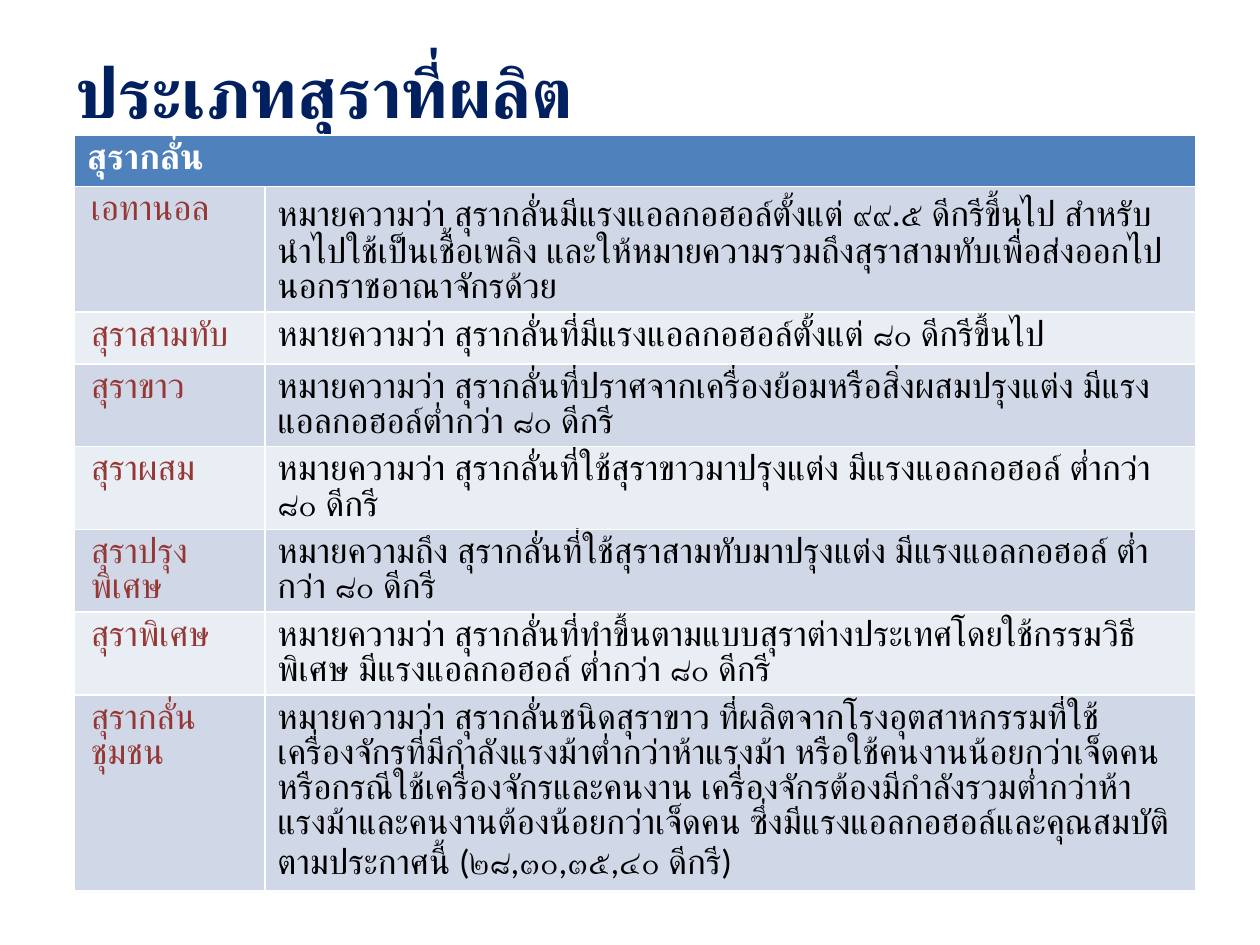
import pptx
import pptx.dml.color
import pptx.enum.text
import pptx.util

Cm = pptx.util.Cm

TITLE = "ประเภทสุราที่ผลิต"
HEADER = "สุรากลั่น"
LIQUORS = [
    ("เอทานอล",
     "หมายความว่า สุรากลั่นมีแรงแอลกอฮอล์ตั้งแต่ ๙๙.๕ ดีกรีขึ้นไป สำหรับนำไปใช้เป็นเชื้อเพลิง "
     "และให้หมายความรวมถึงสุราสามทับเพื่อส่งออกไปนอกราชอาณาจักรด้วย"),
    ("สุราสามทับ",
     "หมายความว่า สุรากลั่นที่มีแรงแอลกอฮอล์ตั้งแต่ ๘๐ ดีกรีขึ้นไป"),
    ("สุราขาว",
     "หมายความว่า สุรากลั่นที่ปราศจากเครื่องย้อมหรือสิ่งผสมปรุงแต่ง "
     "มีแรงแอลกอฮอล์ต่ำกว่า ๘๐ ดีกรี"),
    ("สุราผสม",
     "หมายความว่า สุรากลั่นที่ใช้สุราขาวมาปรุงแต่ง มีแรงแอลกอฮอล์ ต่ำกว่า ๘๐ ดีกรี"),
    ("สุราปรุงพิเศษ",
     "หมายความถึง สุรากลั่นที่ใช้สุราสามทับมาปรุงแต่ง มีแรงแอลกอฮอล์ ต่ำกว่า ๘๐ ดีกรี"),
    ("สุราพิเศษ",
     "หมายความว่า สุรากลั่นที่ทำขึ้นตามแบบสุราต่างประเทศโดยใช้กรรมวิธีพิเศษ "
     "มีแรงแอลกอฮอล์ ต่ำกว่า ๘๐ ดีกรี"),
    ("สุรากลั่นชุมชน",
     "หมายความว่า สุรากลั่นชนิดสุราขาว "
     "ที่ผลิตจากโรงอุตสาหกรรมที่ใช้เครื่องจักรที่มีกำลังแรงม้าต่ำกว่าห้าแรงม้า "
     "หรือใช้คนงานน้อยกว่าเจ็ดคน หรือกรณีใช้เครื่องจักรและคนงาน "
     "เครื่องจักรต้องมีกำลังรวมต่ำกว่าห้าแรงม้าและคนงานต้องน้อยกว่าเจ็ดคน "
     "ซึ่งมีแรงแอลกอฮอล์และคุณสมบัติตามประกาศนี้ (๒๘,๓๐,๓๕,๔๐ ดีกรี)"),
]


def color(hex_string):
    return pptx.dml.color.RGBColor.from_string(hex_string)


class SlideBuilder:
    font_name = "Calibri"
    navy, white, black, red = "002060", "FFFFFF", "000000", "953735"
    header_fill = "4F81BD"
    band_fills = ("D0D8E8", "E9EDF4")

    def __init__(self, slide):
        self.slide = slide

    def text(self, text_frame, text, size, text_color, bold=False):
        text_frame.text = text
        paragraph = text_frame.paragraphs[0]
        paragraph.alignment = pptx.enum.text.PP_ALIGN.LEFT
        font = paragraph.runs[0].font
        formats = {"name": self.font_name, "size": pptx.util.Pt(size), "bold": bold}
        for name, value in formats.items():
            setattr(font, name, value)
        font.color.rgb = color(text_color)

    def title(self, text, left, top, width, height):
        shape = self.slide.shapes.title
        place = {"left": left, "top": top, "width": width, "height": height}
        for name, value in place.items():
            setattr(shape, name, Cm(value))
        shape.text_frame.vertical_anchor = pptx.enum.text.MSO_ANCHOR.MIDDLE
        self.text(shape.text_frame, text, 40, self.navy, bold=True)

    def cell(self, cell, text, text_color, fill, bold=False):
        cell.fill.solid()
        cell.fill.fore_color.rgb = color(fill)
        self.text(cell.text_frame, text, 20, text_color, bold)

    def table(self, header, rows, left, top, column_widths, row_height):
        count = len(rows) + 1
        table = self.slide.shapes.add_table(
            count, len(column_widths), Cm(left), Cm(top),
            Cm(sum(column_widths)), Cm(row_height * count)).table
        for column, width in zip(table.columns, column_widths):
            column.width = Cm(width)
        for row in table.rows:
            row.height = Cm(row_height)

        # Header across both columns
        table.cell(0, 0).merge(table.cell(0, 1))
        self.cell(table.cell(0, 0), header, self.white, self.header_fill, bold=True)

        # Banded rows: name and definition
        for index, (name, definition) in enumerate(rows):
            fill = self.band_fills[index % 2]
            name_cell = table.cell(index + 1, 0)
            self.cell(name_cell, name, self.red, fill)
            name_cell.margin_left = name_cell.margin_right = Cm(0.33)
            self.cell(table.cell(index + 1, 1), definition, self.black, fill)


def main():
    presentation = pptx.Presentation()
    presentation.slide_width = Cm(25.4)
    presentation.slide_height = Cm(19.05)
    slide = presentation.slides.add_slide(presentation.slide_layouts[5])

    builder = SlideBuilder(slide)
    builder.title(TITLE, 1.27, 0.33, 22.86, 3)
    builder.table(HEADER, LIQUORS, 1.5, 2.72, (3.84, 18.77), 1.04)

    presentation.save("out.pptx")


if __name__ == "__main__":
    main()
